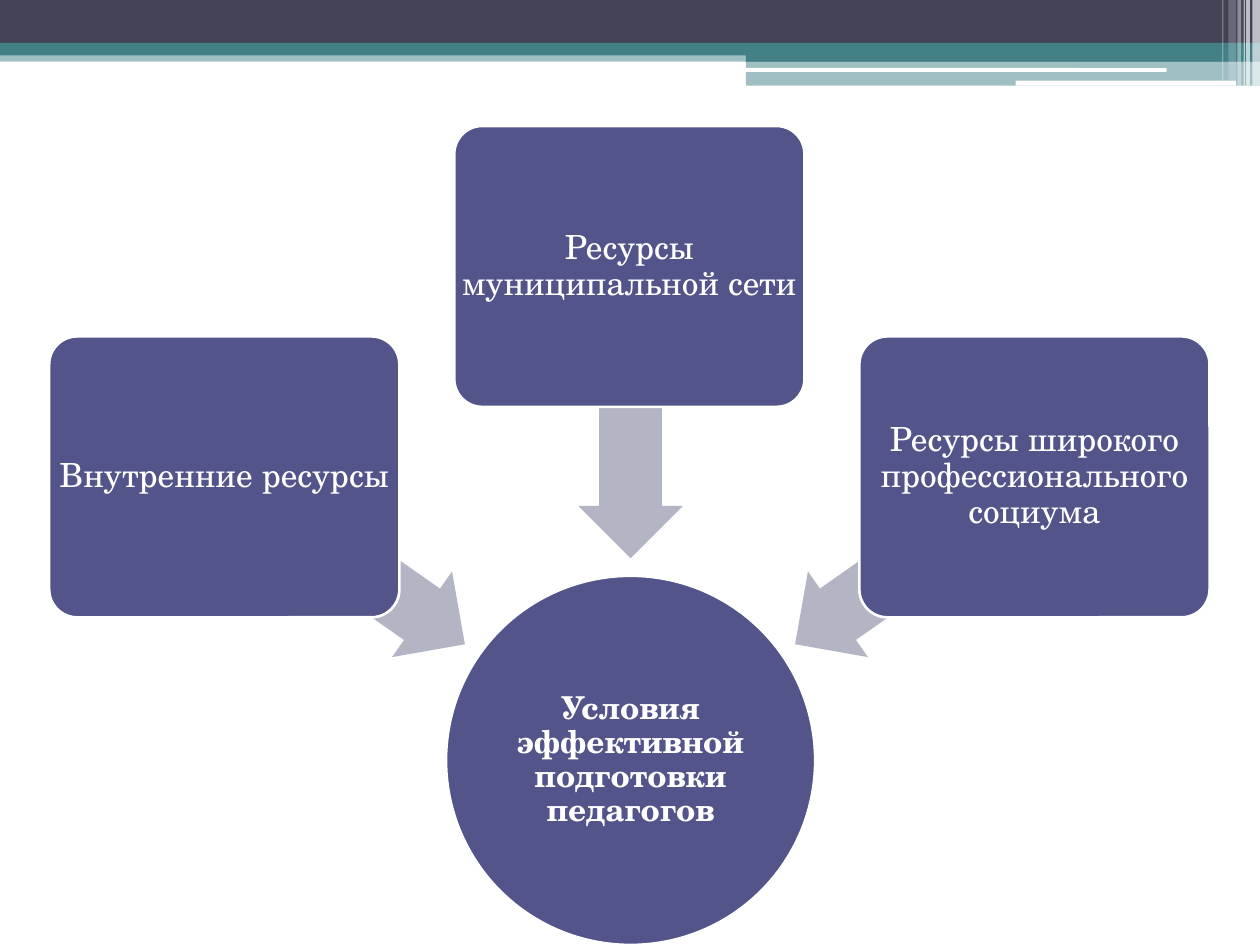
"""Build a slide where three kinds of resources converge on one goal."""
from lxml import etree
from pptx import Presentation
from pptx.dml.color import RGBColor
from pptx.enum.shapes import MSO_SHAPE
from pptx.enum.text import MSO_ANCHOR, PP_ALIGN
from pptx.oxml.ns import qn
from pptx.util import Inches, Pt

RECT, ROUNDED = MSO_SHAPE.RECTANGLE, MSO_SHAPE.ROUNDED_RECTANGLE
OVAL, ARROW = MSO_SHAPE.OVAL, MSO_SHAPE.LEFT_ARROW
MIDDLE, CENTER = MSO_ANCHOR.MIDDLE, PP_ALIGN.CENTER

WHITE = RGBColor(0xFF, 0xFF, 0xFF)
SLATE = RGBColor(0x42, 0x44, 0x56)
TEAL = RGBColor(0x43, 0x80, 0x86)
INDIGO = RGBColor(0x53, 0x54, 0x8A)
LILAC = RGBColor(0xB3, 0xB4, 0xC4)
FONT = "TeX Gyre Schola"

HEADER_BANDS = [
    (RECT, (0, 0.4, 10, 0.09), TEAL, 50),
    (RECT, (0, 0, 10, 0.34), SLATE, 100),
    (RECT, (0, 0.34, 10, 0.1), TEAL, 100),
    (RECT, (5.92, 0.39, 4.08, 0.1), TEAL, 100),
    (RECT, (5.92, 0.48, 4.08, 0.2), TEAL, 50),
    (ROUNDED, (5.91, 0.54, 3.35, 0.03), WHITE, 100),
    (ROUNDED, (8.06, 0.64, 1.75, 0.04), WHITE, 100),
]
CORNER_STRIPES = [
    (9.94, 0.06, 0.68, 65),
    (9.89, 0.03, 0.68, 65),
    (9.87, 0.01, 0.68, 60),
    (9.82, 0.03, 0.68, 40),
    (9.75, 0.06, 0.64, 20),
    (9.7, 0.01, 0.64, 30),
]
GOAL = "Условия эффективной подготовки педагогов"
GOAL_BOX = (3.54, 4.57, 2.93, 2.93)
RESOURCES = [
    {"text": "Внутренние ресурсы", "top": 2.67, "arrow": (1.57, 4.03), "angle": 215},
    {"text": "Ресурсы муниципальной сети", "top": 1, "arrow": (3.84, 2.85), "angle": 270},
    {"text": "Ресурсы широкого профессионального социума", "top": 2.67,
     "arrow": (6.1, 4.03), "angle": 325},
]
CARD_LEFT, CARD_STEP, CARD_SIZE = 0.39, 3.215, (2.78, 2.23)
ARROW_SIZE = (2.33, 0.83)


def add_shape(page, kind, place, color, opacity=100, adjustments=()):
    """Add a flat filled shape without outline or shadow."""
    shape = page.shapes.add_shape(kind, *map(Inches, place))
    shape.shadow.inherit = False
    shape.fill.solid()
    shape.fill.fore_color.rgb = color
    shape.line.fill.background()
    for index, value in enumerate(adjustments):
        shape.adjustments[index] = value
    if opacity < 100:
        tint = shape.fill._xPr.find(qn("a:solidFill"))[0]
        etree.SubElement(tint, qn("a:alpha")).set("val", str(opacity * 1000))
    return shape


def add_label(shape, text, size, inset, bold=False):
    """Outline a shape in white and centre a label in it."""
    shape.line.color.rgb = WHITE
    shape.line.width = Pt(1.5)
    frame = shape.text_frame
    frame_format = {"word_wrap": True, "vertical_anchor": MIDDLE}
    for side in ("left", "right", "top", "bottom"):
        frame_format["margin_" + side] = Inches(inset)
    for name, value in frame_format.items():
        setattr(frame, name, value)
    para = frame.paragraphs[0]
    para.alignment, para.line_spacing = CENTER, 0.9
    span = para.add_run()
    span.text = text
    for name, value in {"name": FONT, "size": Pt(size), "bold": bold}.items():
        setattr(span.font, name, value)
    span.font.color.rgb = WHITE


def main():
    deck = Presentation()
    deck.slide_width, deck.slide_height = Inches(10), Inches(7.5)
    page = deck.slides.add_slide(deck.slide_layouts[6])

    for kind, place, color, opacity in HEADER_BANDS:
        add_shape(page, kind, place, color, opacity)
    for left, width, height, opacity in CORNER_STRIPES:
        add_shape(page, RECT, (left, 0, width, height), WHITE, opacity)

    goal = add_shape(page, OVAL, GOAL_BOX, INDIGO)
    add_label(goal, GOAL, 18, 0.01, bold=True)

    for index, resource in enumerate(RESOURCES):
        arrow = add_shape(page, ARROW, resource["arrow"] + ARROW_SIZE, LILAC,
                          adjustments=(0.6, 0.5))
        arrow.rotation = resource["angle"]
        place = (CARD_LEFT + index * CARD_STEP, resource["top"]) + CARD_SIZE
        card = add_shape(page, ROUNDED, place, INDIGO, adjustments=(0.1,))
        add_label(card, resource["text"], 19, -0.03)

    deck.save("out.pptx")


if __name__ == "__main__":
    main()
